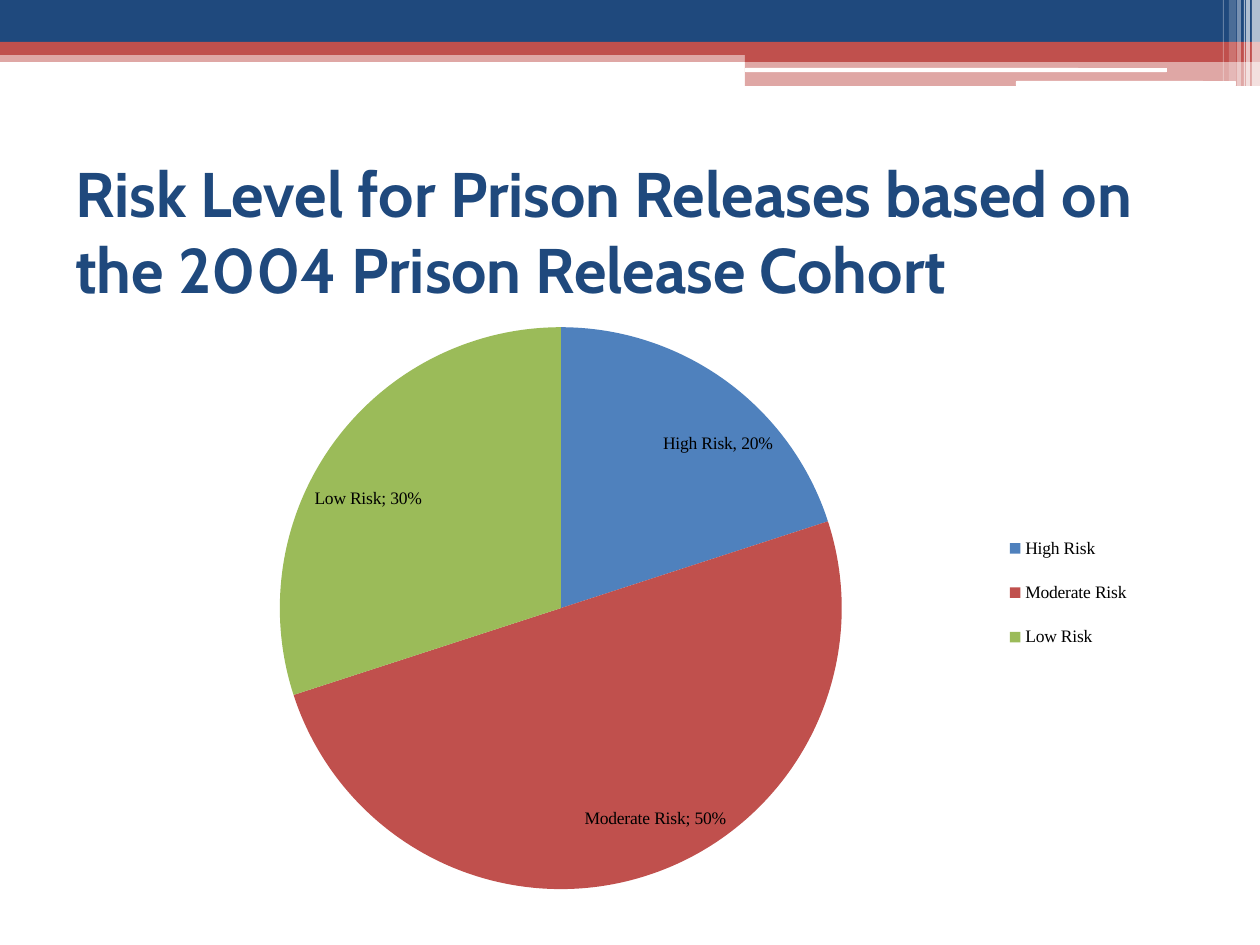
from lxml.etree import SubElement
from pptx import Presentation
from pptx.chart.data import CategoryChartData
from pptx.dml.color import RGBColor
from pptx.enum.chart import XL_CHART_TYPE, XL_LABEL_POSITION, XL_LEGEND_POSITION
from pptx.enum.shapes import MSO_SHAPE
from pptx.enum.text import MSO_ANCHOR
from pptx.oxml import parse_xml
from pptx.oxml.ns import nsdecls, qn
from pptx.util import Pt

PX = 9144000 // 1260
COLORS = {
    "navy": "1F497D", "red": "C0504D", "white": "FFFFFF",
    "blue": "4F81BD", "green": "9BBB59", "black": "000000",
}
TITLE = "Risk Level for Prison Releases based on the 2004 Prison Release Cohort"
RISKS = [
    ("High Risk", 0.2, "blue", (51, 47)),
    ("Moderate Risk", 0.5, "red", (80, -40)),
    ("Low Risk", 0.3, "green", (-25, 42)),
]
FIRST = "High Risk, 20%"
BANDS = [
    (0, 50, 1260, 12, "red", 50),
    (0, 0, 1260, 43, "navy", 100),
    (0, 42, 1260, 13, "red", 100),
    (745, 49, 515, 13, "red", 100),
    (745, 61, 515, 25, "red", 50),
]
LINES = [(745, 68, 422, 4), (1016, 81, 220, 5)]
STRIPES = [(1252, 8, 86, 65), (1246, 4, 86, 65), (1244, 1, 86, 60),
           (1237, 4, 86, 40), (1229, 7, 81, 20), (1223, 1, 81, 30)]
CHART = (63, 310, 1134, 596)
PIE = (280, 327, 562, 562)
KEY = (1003, 514, 130, 158)


def scale(*box):
    return [n * PX for n in box]


def tint(name):
    return RGBColor.from_string(COLORS[name])


def bar(slide, box, color, alpha=100, kind=MSO_SHAPE.RECTANGLE):
    shape = slide.shapes.add_shape(kind, *scale(*box))
    shape.shadow.inherit = False
    shape.fill.solid()
    shape.fill.fore_color.rgb = tint(color)
    shape.line.fill.background()
    if alpha < 100:
        node = shape.fill._xPr.find(".//" + qn("a:srgbClr"))
        SubElement(node, qn("a:alpha"), val=str(alpha * 1000))


def layout(node, index, parts, head=""):
    for old in node.findall(qn("c:layout")):
        node.remove(old)
    sizes = "".join(f'<c:{k} val="{v:.3f}"/>' for k, v in parts.items())
    node.insert(index, parse_xml(
        f'<c:layout {nsdecls("c")}><c:manualLayout>{head}{sizes}'
        "</c:manualLayout></c:layout>"))


def place(node, index, box, head=""):
    left, top, width, height = CHART
    parts = {"x": (box[0] - left) / width, "y": (box[1] - top) / height,
             "w": box[2] / width, "h": box[3] / height}
    modes = "".join(f'<c:{k}Mode val="edge"/>' for k in "xy")
    layout(node, index, parts, head + modes)


def style(font):
    font.size = Pt(10)
    font.name = "Times New Roman"
    font.color.rgb = tint("black")


def title(slide):
    frame = slide.shapes.add_textbox(*scale(63, 157, 1134, 147)).text_frame
    frame.word_wrap = True
    frame.vertical_anchor = MSO_ANCHOR.MIDDLE
    frame.text = TITLE
    font = frame.paragraphs[0].runs[0].font
    font.name, font.size, font.bold = "Cabin", Pt(36), True
    font.color.rgb = tint("navy")


def pie(slide):
    data = CategoryChartData(number_format="0%")
    data.categories = [risk[0] for risk in RISKS]
    data.add_series("Series 1", [risk[1] for risk in RISKS])
    chart = slide.shapes.add_chart(XL_CHART_TYPE.PIE, *scale(*CHART), data).chart
    style(chart.font)
    chart.has_title = False
    chart.has_legend = True
    chart.legend.position = XL_LEGEND_POSITION.RIGHT
    chart.legend.include_in_layout = False
    plot = chart.plots[0]
    plot.vary_by_categories = True
    series = plot.series[0]
    labels = series.data_labels
    labels.show_value = labels.show_category_name = True
    labels.show_percentage = labels.show_legend_key = False
    labels.number_format = "0%"
    labels.number_format_is_linked = False
    labels.position = XL_LABEL_POSITION.INSIDE_END
    style(labels.font)
    for index, (_, _, color, shift) in enumerate(RISKS):
        point = series.points[index]
        point.format.fill.solid()
        point.format.fill.fore_color.rgb = tint(color)
        label = point.data_label
        if index == 0:
            label.text_frame.text = FIRST
            style(label.text_frame.paragraphs[0].runs[0].font)
        else:
            style(label.font)
        label.position = XL_LABEL_POSITION.INSIDE_END
        node = labels._element.findall(qn("c:dLbl"))[index]
        node.find(qn("c:showCatName")).set("val", "1")
        layout(node, 1, {"x": shift[0] / CHART[2], "y": shift[1] / CHART[3]})
    area = chart._chartSpace.find(".//" + qn("c:plotArea"))
    place(area, 0, PIE, '<c:layoutTarget val="inner"/>')
    place(chart.legend._element, 1, KEY)


def main():
    deck = Presentation()
    deck.slide_width, deck.slide_height = scale(1260, 945)
    slide = deck.slides.add_slide(deck.slide_layouts[6])
    for *box, color, alpha in BANDS:
        bar(slide, box, color, alpha)
    for box in LINES:
        bar(slide, box, "white", kind=MSO_SHAPE.ROUNDED_RECTANGLE)
    for left, width, height, alpha in STRIPES:
        bar(slide, (left, 0, width, height), "white", alpha)
    title(slide)
    pie(slide)
    deck.save("out.pptx")


if __name__ == "__main__":
    main()
